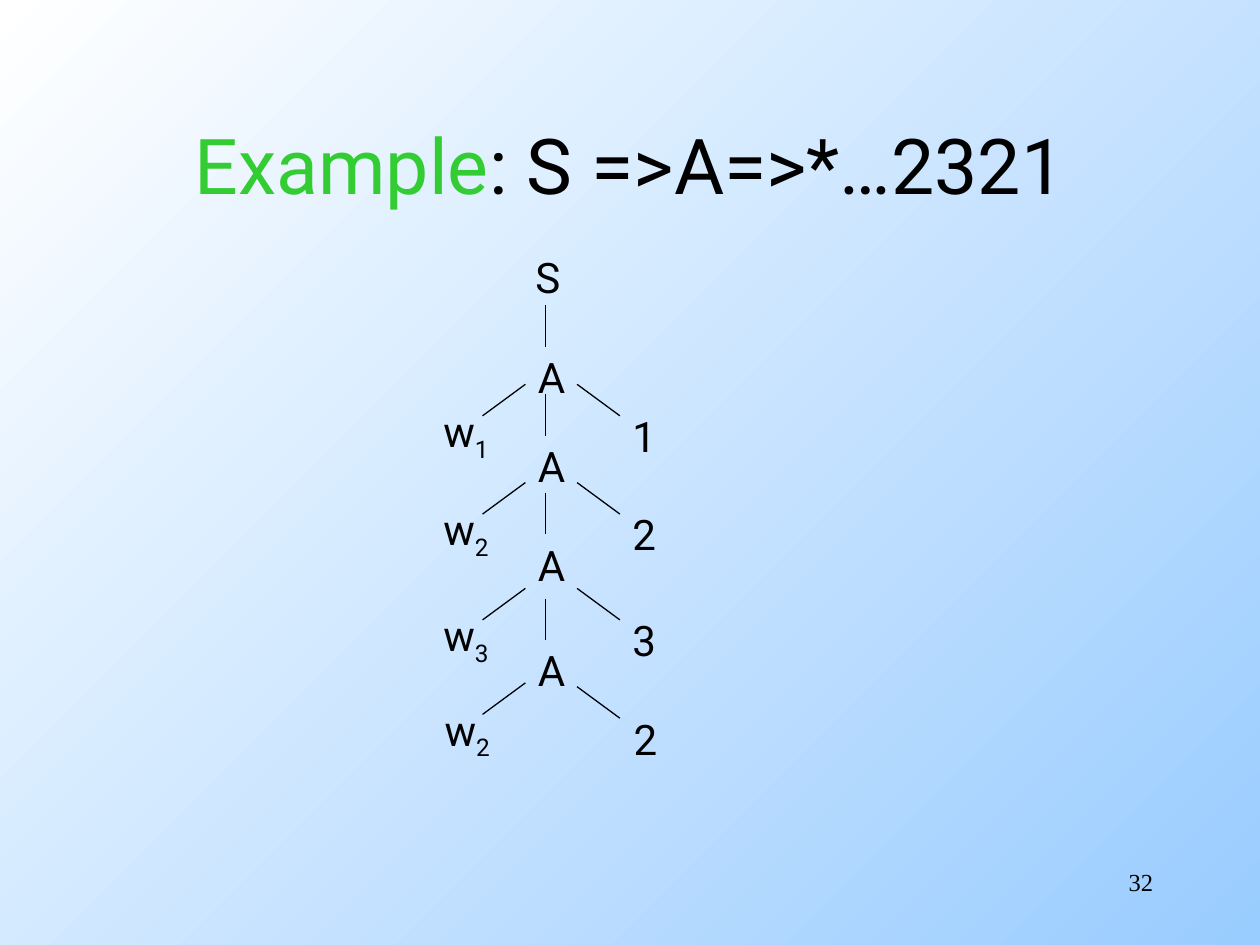
from dataclasses import dataclass

from pptx import Presentation
from pptx.dml.color import RGBColor
from pptx.enum.shapes import MSO_CONNECTOR as Connector
from pptx.enum.text import MSO_ANCHOR as Anchor, MSO_AUTO_SIZE as AutoSize, PP_ALIGN as Align
from pptx.oxml.ns import qn
from pptx.util import Inches, Pt
from lxml.etree import SubElement


@dataclass(frozen=True)
class Theme:
    """Colours, fonts and sizes of the slide."""
    ink: RGBColor = RGBColor(0, 0, 0)
    accent: RGBColor = RGBColor(0x33, 0xCC, 0x33)
    light: RGBColor = RGBColor(0xFF, 0xFF, 0xFF)
    sky: RGBColor = RGBColor(0x99, 0xCC, 0xFF)
    font: str = "Roboto"
    number_font: str = "Times New Roman"
    title_size: int = 44
    node_size: int = 24
    number_size: int = 14
    line_width: float = 0.75


THEME = Theme()
LEVELS = [
    (3.05, "1", "1"),
    (3.83, "2", "2"),
    (4.67, "3", "3"),
    (5.42, "2", "2"),
]


def paint_background(slide):
    """Fill the slide with a diagonal gradient."""
    fill = slide.background.fill
    fill.gradient()
    fill.gradient_angle = 315
    for stop, color in zip(fill.gradient_stops, (THEME.light, THEME.sky)):
        stop.color.rgb = color


def add_text(shapes, box, text, size, font=THEME.font, align=Align.LEFT, wrap=True):
    """Place one paragraph of text in a box and return the paragraph."""
    frame = shapes.add_textbox(*map(Inches, box)).text_frame
    frame.word_wrap = wrap
    frame.vertical_anchor = Anchor.TOP if not wrap else Anchor.MIDDLE
    frame.auto_size = AutoSize.NONE if wrap else AutoSize.SHAPE_TO_FIT_TEXT
    paragraph = frame.paragraphs[0]
    paragraph.alignment = align
    paragraph.font.size = Pt(size)
    paragraph.font.name = font
    paragraph.font.color.rgb = THEME.ink
    paragraph.add_run().text = text
    return paragraph


def add_node(shapes, left, top, width, text, subscript=""):
    """Place a tree node label, with an optional subscript."""
    box = (left, top, width, 0.5)
    paragraph = add_text(shapes, box, text, THEME.node_size, wrap=False)
    if subscript:
        run = paragraph.add_run()
        run.text = subscript
        run._r.get_or_add_rPr().set("baseline", "-25000")


def add_branch(shapes, start, end):
    """Draw a thin tree branch between two points."""
    line = shapes.add_connector(Connector.STRAIGHT, *map(Inches, (*start, *end)))
    line.line.color.rgb = THEME.ink
    line.line.width = Pt(THEME.line_width)
    SubElement(line._element.spPr, qn("a:effectLst"))


def add_stem(shapes, center, top):
    """Draw a vertical branch down to the next A."""
    add_node(shapes, center - 0.16, top + 0.4, 0.4, "A")
    add_branch(shapes, (center, top + 0.08), (center, top + 0.41))


def add_fork(shapes, center, top, word, digit, shift=0.0, drop=0.0):
    """Draw the two side branches of an A with their leaves."""
    add_node(shapes, center + 0.59 + shift, top + 0.16 + drop, 0.38, digit)
    add_node(shapes, center - 0.91 + shift, top + 0.12, 0.57, "w", word)
    add_branch(shapes, (center - 0.16, top), (center - 0.5, top + 0.25))
    add_branch(shapes, (center + 0.25, top + drop), (center + 0.59, top + 0.25 + drop))


def add_tree(slide, center, top):
    """Draw the derivation tree, one group for each level."""
    add_node(slide.shapes, center - 0.18, top, 0.39, "S")
    add_stem(slide.shapes.add_group_shape().shapes, center, top + 0.39)
    for level_top, word, digit in LEVELS[:-1]:
        shapes = slide.shapes.add_group_shape().shapes
        add_fork(shapes, center, level_top, word, digit)
        add_stem(shapes, center, level_top)
    shapes = slide.shapes.add_group_shape().shapes
    add_fork(shapes, center, *LEVELS[-1], shift=0.01, drop=0.03)


def add_title(slide, box):
    """Place the two-coloured title."""
    paragraph = add_text(slide.shapes, box, "Example", THEME.title_size, align=Align.CENTER)
    paragraph.runs[0].font.color.rgb = THEME.accent
    paragraph.add_run().text = ": S =>A=>*…2321"


def add_slide_number(slide, box):
    """Place the slide number at the top right of its box."""
    paragraph = add_text(slide.shapes, box, "32", THEME.number_size,
                         THEME.number_font, Align.RIGHT)
    slide.shapes[-1].text_frame.vertical_anchor = Anchor.TOP
    return paragraph


def main():
    """Build and save the slide."""
    presentation = Presentation()
    presentation.slide_width, presentation.slide_height = Inches(10), Inches(7.5)
    slide = presentation.slides.add_slide(presentation.slide_layouts[6])
    paint_background(slide)
    add_slide_number(slide, (7.17, 6.83, 2.08, 0.5))
    add_title(slide, (0.75, 0.67, 8.5, 1.25))
    add_tree(slide, 4.33, 1.95)
    presentation.save("out.pptx")


if __name__ == "__main__":
    main()
